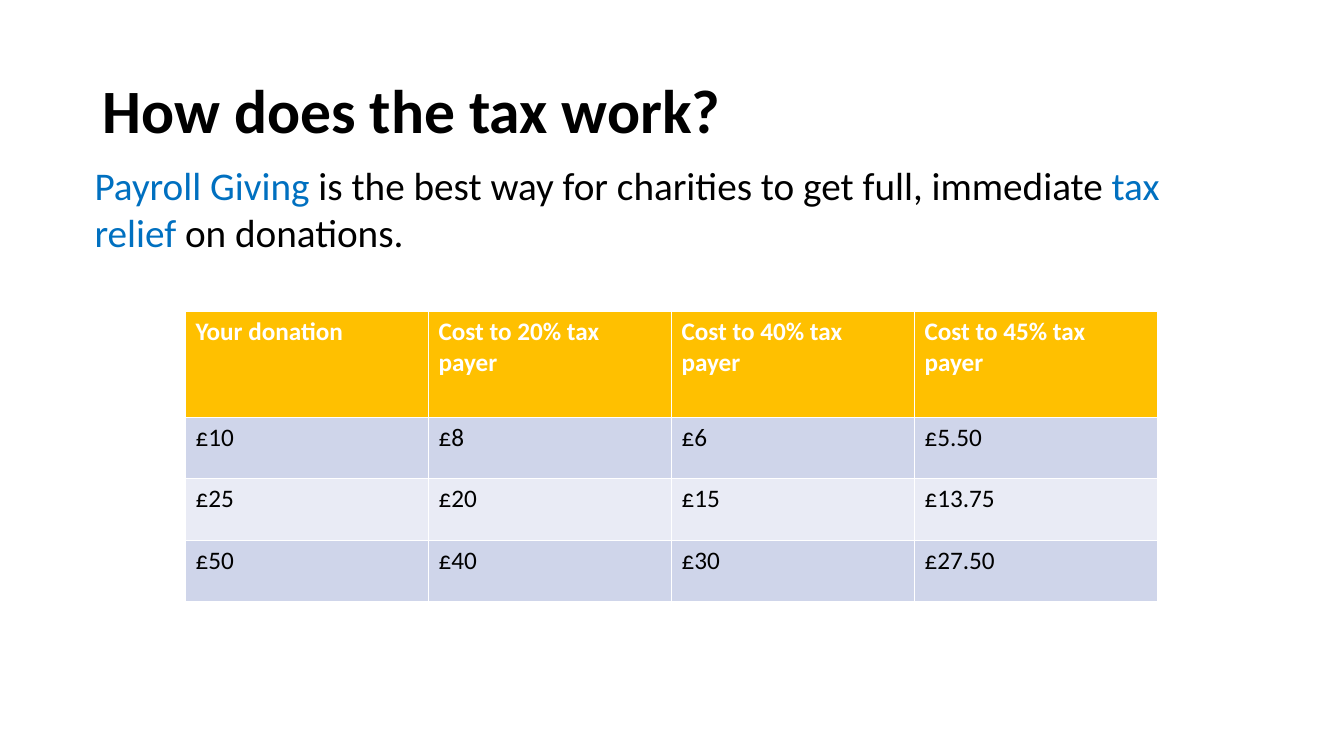
from dataclasses import dataclass

from pptx import Presentation
from pptx.dml.color import RGBColor
from pptx.enum.text import MSO_ANCHOR
from pptx.util import Inches, Pt

MIDDLE, TOP = MSO_ANCHOR.MIDDLE, MSO_ANCHOR.TOP
FONT = "Calibri"
COLORS = {
    "text": "000000",
    "accent": "0070C0",
    "header_text": "FFFFFF",
    "header": "FFC000",
    "band_dark": "CFD5EA",
    "band_light": "E9EBF5",
}


@dataclass
class Phrase:
    text: str
    color: str = "text"


@dataclass
class TextBlock:
    left: float
    top: float
    width: float
    height: float
    phrases: list[Phrase]
    size: int
    bold: bool = False
    anchor: MSO_ANCHOR = TOP
    line_spacing: float = 1.0


HEADING = TextBlock(0.92, 0.4, 11.5, 1.45, [Phrase("How does the tax work?")],
                    44, True, MIDDLE, 0.9)
INTRO = TextBlock(0.84, 1.55, 11.26, 1.04, [
    Phrase("Payroll Giving ", "accent"),
    Phrase("is the best way for charities to get full, immediate "),
    Phrase("tax relief ", "accent"),
    Phrase("on donations."),
], 28)

TAX_RATES = ("20%", "40%", "45%")
DONATION_COSTS = [
    ["Your donation"] + [f"Cost to {rate} tax payer" for rate in TAX_RATES],
    ["£10", "£8", "£6", "£5.50"],
    ["£25", "£20", "£15", "£13.75"],
    ["£50", "£40", "£30", "£27.50"],
]
HEADER_HEIGHT, ROW_HEIGHT, COLUMN_WIDTH = 1.05, 0.61, 2.41


def rgb(name: str) -> RGBColor:
    return RGBColor.from_string(COLORS[name])


def add_text(slide, block: TextBlock) -> None:
    box = slide.shapes.add_textbox(Inches(block.left), Inches(block.top),
                                   Inches(block.width), Inches(block.height))
    frame = box.text_frame
    frame.word_wrap = True
    frame.vertical_anchor = block.anchor
    paragraph = frame.paragraphs[0]
    paragraph.line_spacing = block.line_spacing
    paragraph.font.name = FONT
    paragraph.font.size = Pt(block.size)
    paragraph.font.bold = block.bold
    for phrase in block.phrases:
        run = paragraph.add_run()
        run.text = phrase.text
        run.font.color.rgb = rgb(phrase.color)


def fill_cell(cell, text: str, fill: str, color: str, bold: bool) -> None:
    cell.text = text
    cell.fill.solid()
    cell.fill.fore_color.rgb = rgb(fill)
    font = cell.text_frame.paragraphs[0].font
    font.name = FONT
    font.size = Pt(18)
    font.bold = bold
    font.color.rgb = rgb(color)


def add_cost_table(slide, rows: list[list[str]]) -> None:
    height = HEADER_HEIGHT + ROW_HEIGHT * (len(rows) - 1)
    costs = slide.shapes.add_table(
        len(rows), len(rows[0]), Inches(1.84), Inches(3.09),
        Inches(COLUMN_WIDTH * len(rows[0])), Inches(height)).table
    for column in costs.columns:
        column.width = Inches(COLUMN_WIDTH)
    for r, texts in enumerate(rows):
        is_header = r == 0
        costs.rows[r].height = Inches(HEADER_HEIGHT if is_header else ROW_HEIGHT)
        band = "band_dark" if r % 2 else "band_light"
        for c, text in enumerate(texts):
            fill_cell(costs.cell(r, c), text,
                      "header" if is_header else band,
                      "header_text" if is_header else "text", is_header)


def main() -> None:
    deck = Presentation()
    deck.slide_width, deck.slide_height = Inches(13.33), Inches(7.5)
    slide = deck.slides.add_slide(deck.slide_layouts[6])

    # Heading and introduction
    for block in (HEADING, INTRO):
        add_text(slide, block)

    # Cost of each donation by tax rate
    add_cost_table(slide, DONATION_COSTS)

    deck.save("out.pptx")


if __name__ == "__main__":
    main()
